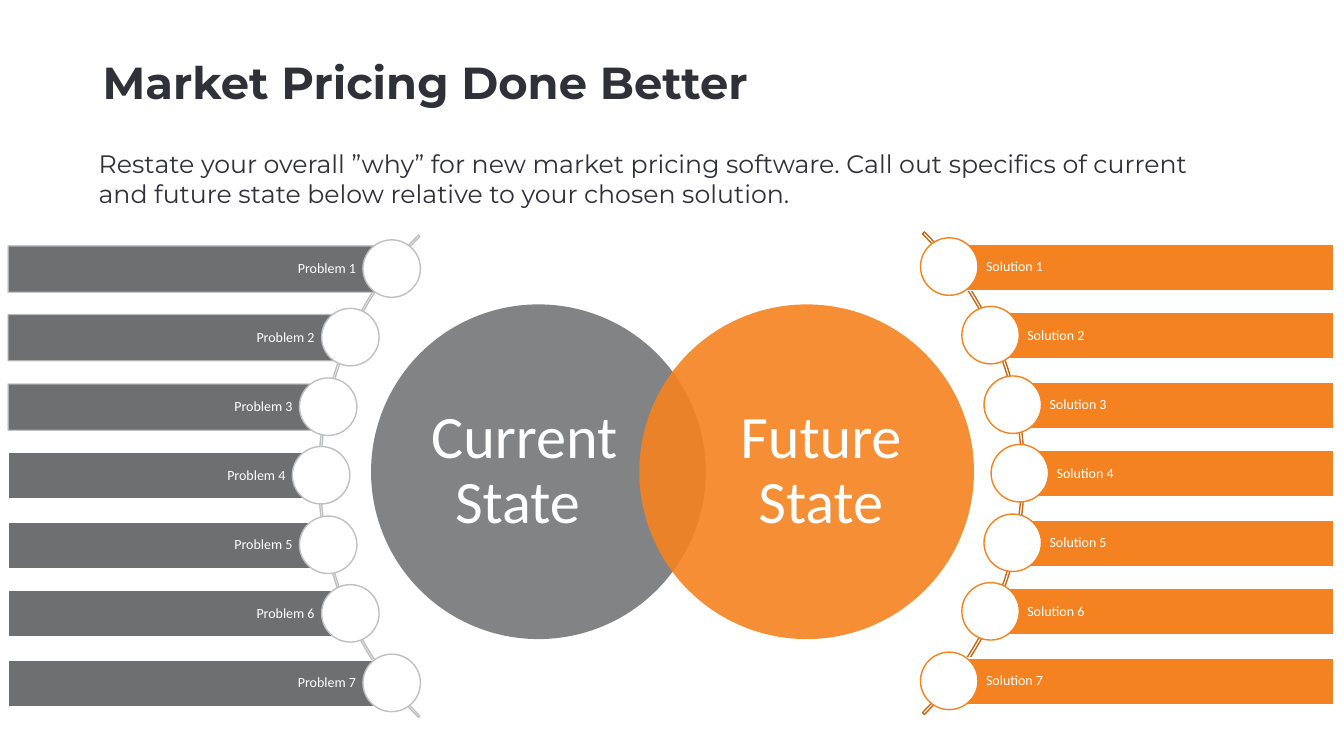
from math import sqrt

from lxml import etree
from pptx import Presentation
from pptx import util as u
from pptx.dml import color
from pptx.enum import shapes, text
from pptx.oxml import ns

PX = 9144
INK, WHITE = "2F3038", "FFFFFF"
GREY, SILVER = "6E6F71", "BFC0C2"
ORANGE, RUST = "F58220", "C4681A"
LEFT, CENTER, RIGHT = text.PP_ALIGN.LEFT, text.PP_ALIGN.CENTER, text.PP_ALIGN.RIGHT
MIDDLE, TOP = text.MSO_ANCHOR.MIDDLE, text.MSO_ANCHOR.TOP
RECTANGLE = shapes.MSO_SHAPE.RECTANGLE
OVAL = shapes.MSO_SHAPE.OVAL
BLOCK_ARC = shapes.MSO_SHAPE.BLOCK_ARC


def rgb(value):
    return color.RGBColor.from_string(value)


def write(shape, words, size, font="Calibri", ink=WHITE, bold=False, align=LEFT,
          anchor=MIDDLE, insets=(10, 5, 10, 5), spacing=0.9):
    frame = shape.text_frame
    frame.word_wrap = True
    frame.vertical_anchor = anchor
    (frame.margin_left, frame.margin_top,
     frame.margin_right, frame.margin_bottom) = [inset * PX for inset in insets]
    paragraph = frame.paragraphs[0]
    paragraph.alignment = align
    paragraph.line_spacing = spacing
    run = paragraph.add_run()
    run.text = words
    run.font.name = font
    run.font.size = u.Pt(size)
    run.font.bold = bold
    run.font.color.rgb = rgb(ink)


class Board:
    """Holds the slide and the style of its elements."""

    def __init__(self, deck):
        self.slide = deck.slides.add_slide(deck.slide_layouts[6])

    def shape(self, kind, box, fill=None, line=None, fill_alpha=100, line_alpha=100):
        item = self.slide.shapes.add_shape(kind, *[side * PX for side in box])
        item.shadow.inherit = False
        for paint, value in ((item.fill, fill), (item.line.fill, line)):
            if value:
                paint.solid()
                paint.fore_color.rgb = rgb(value)
            else:
                paint.background()
        if line:
            item.line.width = u.Pt(1)
        for route, alpha in (("a:solidFill", fill_alpha), ("a:ln/a:solidFill", line_alpha)):
            if alpha < 100:
                tint = item._element.spPr.find(route, ns._nsmap)[0]
                etree.SubElement(tint, ns.qn("a:alpha"), val=str(alpha * 1000))
        return item

    def heading(self, words, box, size, **style):
        item = self.slide.shapes.add_textbox(*[side * PX for side in box])
        write(item, words, size, font="Montserrat", ink=INK, **style)

    def state(self, words, left, fill, alpha, insets):
        circle = self.shape(OVAL, (left, 302, 332, 332), fill, fill_alpha=alpha)
        write(circle, words, 43, align=CENTER, insets=insets)

    def arc(self, left, top, line, angles):
        curve = self.shape(BLOCK_ARC, (left, top, 677, 677), line=line)
        for index, value in enumerate(angles):
            curve.adjustments[index] = value

    def row(self, words, left, right, top, dot, fill, line, ring, line_alpha, align, insets):
        bar = self.shape(RECTANGLE, (left, top + 6, right - left, 46), fill, line,
                         line_alpha=line_alpha)
        write(bar, words, 10, align=align, insets=insets)
        self.shape(OVAL, (dot - 29, top, 57, 57), WHITE, ring)


def main():
    deck = Presentation()
    deck.slide_width, deck.slide_height = u.Inches(13.33), u.Inches(7.5)
    board = Board(deck)

    board.heading("Market Pricing Done Better", (92, 40, 1150, 89), 32, bold=True)
    board.state("Current State ", 368, GREY, 86, (10, 6, 38, 6))
    board.state("Future State", 634, ORANGE, 90, (38, 6, 10, 6))

    rows, radius, span = 7, 335, 411
    reaches = [round(sqrt(radius ** 2 - (span * (row / (rows - 1) - 0.5)) ** 2))
               for row in range(rows)]
    drops = [span * row // (rows - 1) for row in range(rows)]

    board.arc(339, 131, RUST, (189, 27, 0.004))
    for row, (reach, drop) in enumerate(zip(reaches, drops)):
        dot = 677 + reach
        board.row(f"Solution {row + 1}", dot, 1323, 236 + drop, dot,
                  ORANGE, WHITE, ORANGE, 100, LEFT, (36, 3, 3, 3))

    board.arc(316, 134, SILVER, (81, 135, 0.003))
    for row, (reach, drop) in enumerate(zip(reaches, drops)):
        dot = 654 - reach
        edge, alpha = (SILVER, 84) if row < 3 else (WHITE, 100)
        board.row(f"Problem {row + 1}", 8, dot, 238 + drop, dot,
                  GREY, edge, SILVER, alpha, RIGHT, (3, 3, 36, 3))

    board.heading("Restate your overall ”why” for new market pricing software. "
                  "Call out specifics of current and future state below relative "
                  "to your chosen solution.",
                  (88, 142, 1152, 71), 18, anchor=TOP, spacing=1.0)
    deck.save("out.pptx")


if __name__ == "__main__":
    main()
